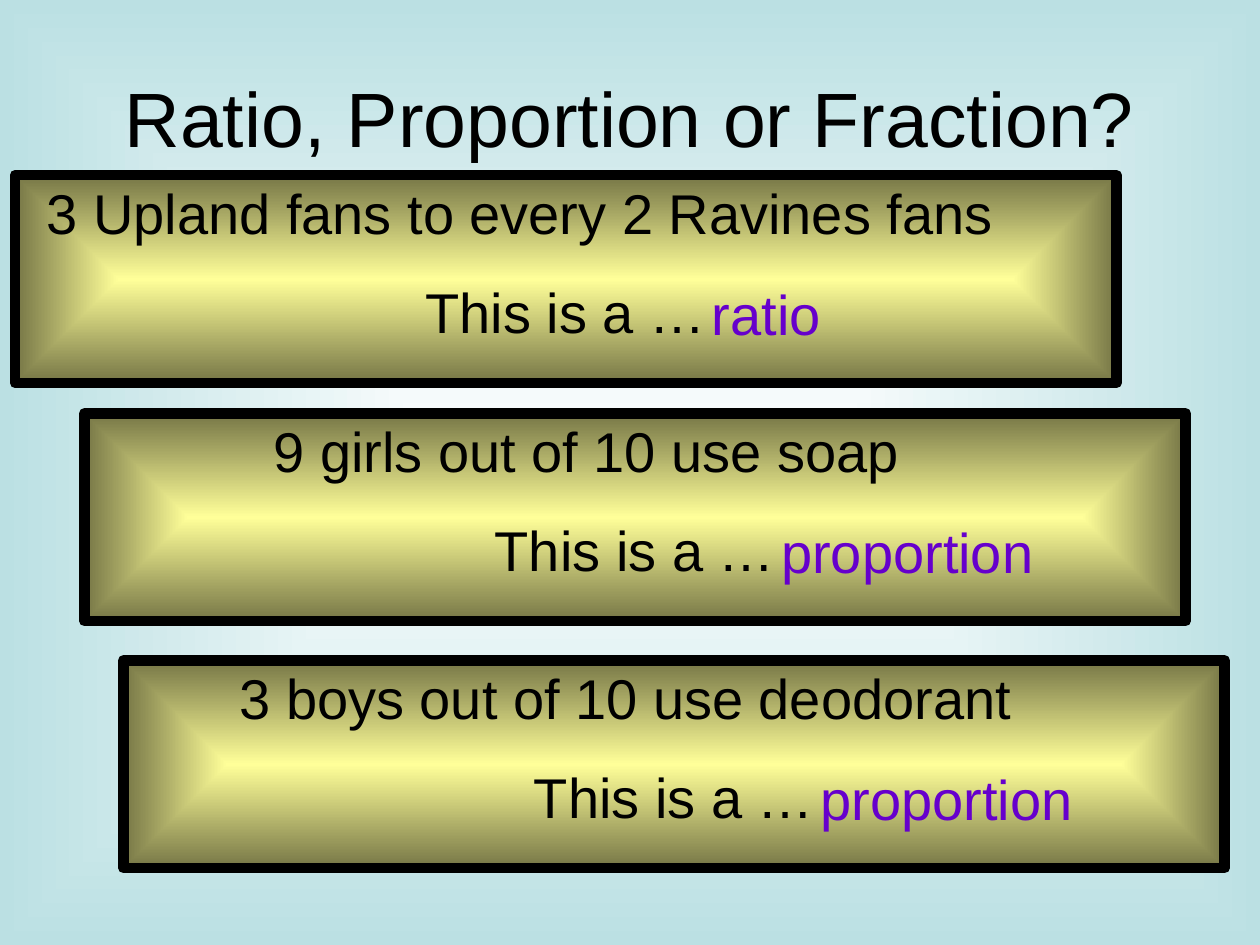
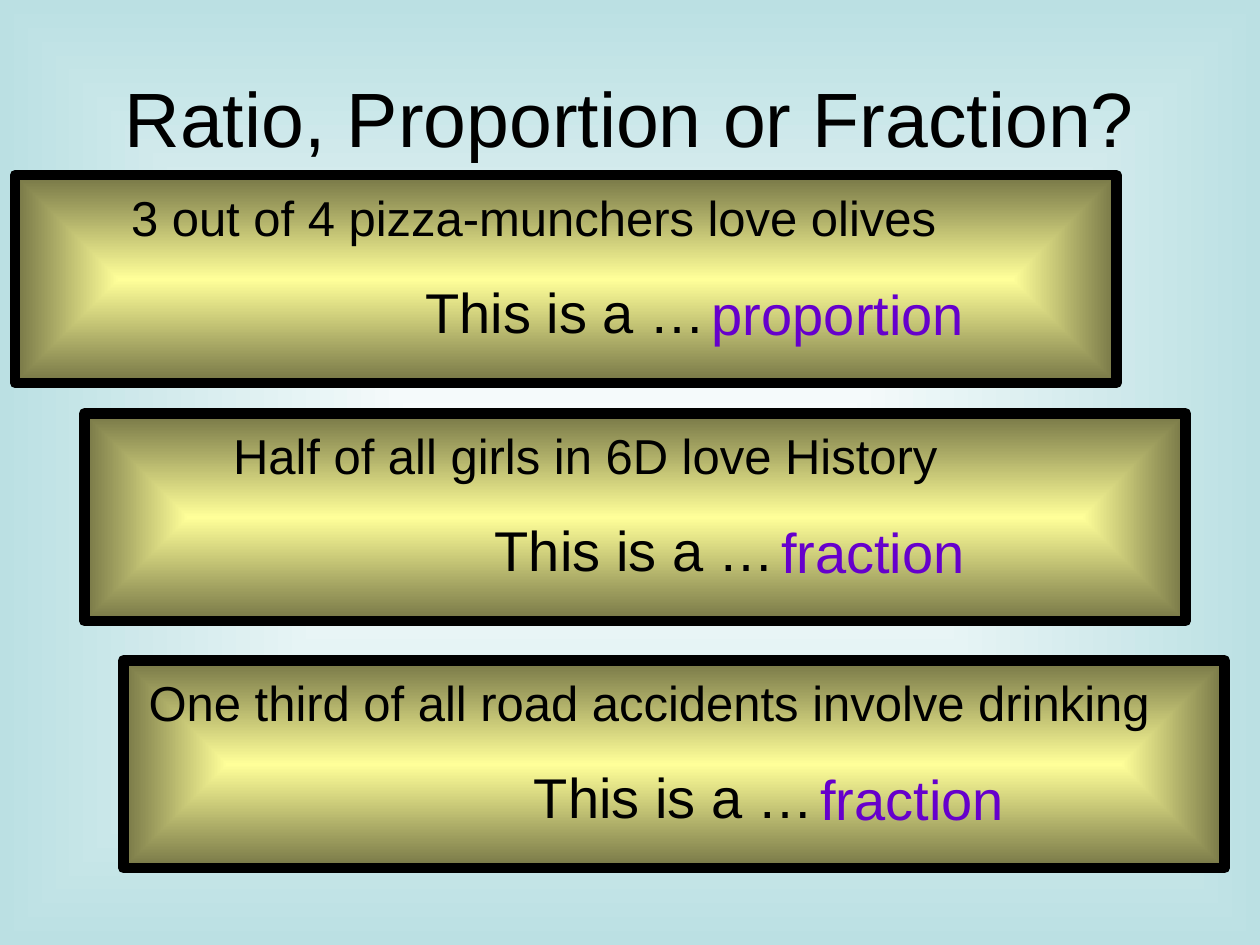
"""Build two quiz slides on telling ratios, proportions and fractions apart."""
from lxml import etree
from pptx import Presentation
from pptx.dml.color import RGBColor
from pptx.enum.shapes import MSO_SHAPE
from pptx.enum.text import MSO_ANCHOR, PP_ALIGN
from pptx.oxml.ns import nsdecls, qn
from pptx.util import Inches, Pt

RECTANGLE = MSO_SHAPE.RECTANGLE
TOP, MIDDLE = MSO_ANCHOR.TOP, MSO_ANCHOR.MIDDLE
LEFT, CENTER = PP_ALIGN.LEFT, PP_ALIGN.CENTER

FONT = "Arial"
INK, ANSWER_INK = "000000", "6600CC"
PAPER, SKY, CARD_YELLOW = "FFFFFF", "BBE0E3", "FFFF99"
DARKEN = '<a:gamma/><a:shade val="46275"/><a:invGamma/>'

HEADING = "Ratio, Proportion or Fraction?"
CARD_WIDTH, CARD_HEIGHT = 8.74, 1.65
CARD_CORNERS = [(0.12, 1.39), (0.67, 3.28), (0.98, 5.24)]
ANSWER_SHIFT_X, ANSWER_SHIFT_Y = 5.51, 0.78
ANSWER_WIDTH, ANSWER_HEIGHT = 2.44, 0.71

QUIZZES = [
    (32, [("3 Upland fans to every 2 Ravines fans", 0.23, "ratio"),
          ("9 girls out of 10 use soap", 1.48, "proportion"),
          ("3 boys out of 10 use deodorant", 0.9, "proportion")]),
    (28, [("3 out of 4 pizza-munchers love olives", 0.9, "proportion"),
          ("Half of all girls in 6D love History", 1.16, "fraction"),
          ("One third of all road accidents involve drinking", 0.18, "fraction")]),
]


def glow(holder, inner, outer, darken=""):
    """Replace the solid fill of holder with a gradient out from its centre."""
    gradient = etree.fromstring(
        f'<a:gradFill {nsdecls("a")} rotWithShape="1"><a:gsLst>'
        f'<a:gs pos="0"><a:srgbClr val="{inner}"/></a:gs>'
        f'<a:gs pos="100000"><a:srgbClr val="{outer}">{darken}</a:srgbClr></a:gs>'
        '</a:gsLst><a:path path="shape">'
        '<a:fillToRect l="50000" t="50000" r="50000" b="50000"/>'
        '</a:path></a:gradFill>')
    holder.replace(holder.find(qn("a:solidFill")), gradient)


def write(paragraph, words, size, color=INK, align=LEFT):
    """Add one run of words to paragraph."""
    paragraph.alignment = align
    run = paragraph.add_run()
    run.text = words
    run.font.name = FONT
    run.font.size = Pt(size)
    run.font.color.rgb = RGBColor.from_string(color)


prs = Presentation()
prs.slide_width, prs.slide_height = Inches(10), Inches(7.5)
master = prs.slide_master
master.background.fill.solid()
glow(next(master.element.iter(qn("p:bgPr"))), PAPER, SKY)

for claim_size, questions in QUIZZES:
    slide = prs.slides.add_slide(prs.slide_layouts[5])
    heading = slide.shapes.title
    heading.left, heading.top = Inches(0.5), Inches(0.3)
    heading.width, heading.height = Inches(9), Inches(1.25)
    heading.text_frame.vertical_anchor = MIDDLE
    write(heading.text_frame.paragraphs[0], HEADING, 44, align=CENTER)

    for (left, top), (claim, indent, kind) in zip(CARD_CORNERS, questions):
        card = slide.shapes.add_shape(RECTANGLE, Inches(left), Inches(top),
                                      Inches(CARD_WIDTH), Inches(CARD_HEIGHT))
        card.shadow.inherit = False
        card.fill.solid()
        glow(card.element.spPr, CARD_YELLOW, CARD_YELLOW, DARKEN)
        card.line.color.rgb = RGBColor.from_string(INK)
        card.line.width = Pt(6)
        answer = slide.shapes.add_textbox(
            Inches(left + ANSWER_SHIFT_X), Inches(top + ANSWER_SHIFT_Y),
            Inches(ANSWER_WIDTH), Inches(ANSWER_HEIGHT))

        for frame in (card.text_frame, answer.text_frame):
            frame.word_wrap = True
            frame.vertical_anchor = TOP
            frame.margin_left = frame.margin_right = Inches(0.02)
            frame.margin_top = frame.margin_bottom = Inches(0.05)

        statement = card.text_frame.paragraphs[0]
        statement.line_spacing = Pt(37)
        statement._p.get_or_add_pPr().set("marL", str(Inches(indent)))
        write(statement, claim, claim_size)
        prompt = card.text_frame.add_paragraph()
        prompt.space_before = Pt(18)
        write(prompt, "This is a …", 32, align=CENTER)
        write(answer.text_frame.paragraphs[0], kind, 32, ANSWER_INK)

prs.save("out.pptx")
